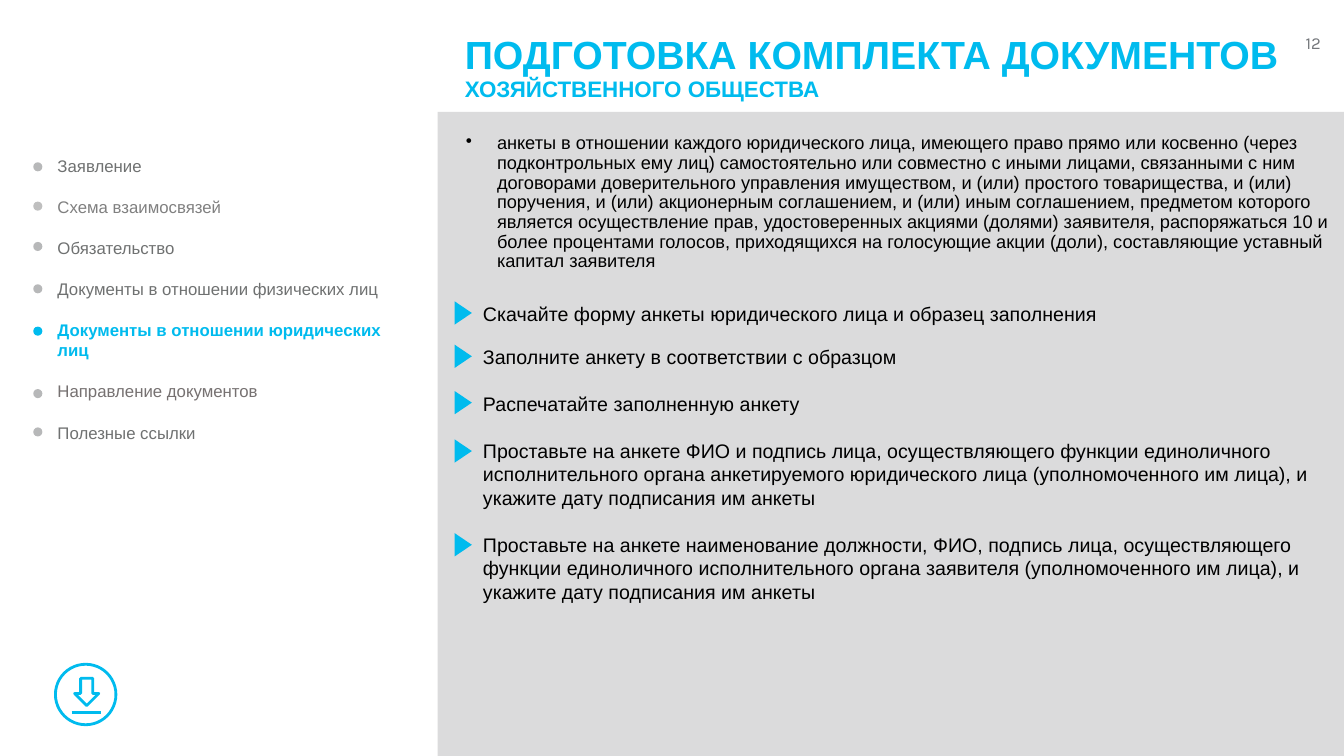
from dataclasses import dataclass

from lxml import etree
from pptx import Presentation
from pptx.dml.color import RGBColor
from pptx.enum.shapes import MSO_CONNECTOR, MSO_SHAPE
from pptx.enum.text import MSO_ANCHOR, MSO_AUTO_SIZE, PP_ALIGN
from pptx.oxml.ns import qn
from pptx.util import Emu, Pt

RECTANGLE = MSO_SHAPE.RECTANGLE
OVAL = MSO_SHAPE.OVAL
TRIANGLE = MSO_SHAPE.ISOSCELES_TRIANGLE
DOWN_ARROW = MSO_SHAPE.DOWN_ARROW
STRAIGHT = MSO_CONNECTOR.STRAIGHT
LEFT, RIGHT = PP_ALIGN.LEFT, PP_ALIGN.RIGHT
MIDDLE, TOP = MSO_ANCHOR.MIDDLE, MSO_ANCHOR.TOP
FIXED_SIZE = MSO_AUTO_SIZE.NONE

EMU_PER_PX = 9144
TWO_CONTENT_LAYOUT = 3
COLORS = {
    "accent": "00BBEE",
    "panel": "DBDBDC",
    "black": "000000",
    "number": "74777B",
    "menu": "6F7171",
    "menu_light": "808080",
    "menu_warm": "767171",
    "dot": "B7B8B9",
    "dot_light": "BFBFBF",
}


@dataclass(frozen=True)
class MenuItem:
    text: str
    dot_top: int
    color: str = "menu"
    dot_color: str = "dot"
    bold: bool = False


@dataclass(frozen=True)
class Step:
    text: str
    marker_top: int
    space_before: float


MENU = [
    MenuItem("Заявление", 161),
    MenuItem("Схема взаимосвязей", 200, "menu_light", "dot_light"),
    MenuItem("Обязательство", 240),
    MenuItem("Документы в отношении физических лиц", 282),
    MenuItem("Документы в отношении юридических лиц", 324, "accent", "accent", True),
    MenuItem("Направление документов", 386, "menu_warm"),
    MenuItem("Полезные ссылки", 424),
]

STEPS = [
    Step("Скачайте форму анкеты юридического лица и образец заполнения", 302, 0),
    Step("Заполните анкету в соответствии с образцом", 345, 14),
    Step("Распечатайте заполненную анкету", 391, 16.8),
    Step(
        "Проставьте на анкете ФИО и подпись лица, осуществляющего функции единоличного "
        "исполнительного органа анкетируемого юридического лица (уполномоченного им лица), "
        "и укажите дату подписания им анкеты", 439, 16.8),
    Step(
        "Проставьте на анкете наименование должности, ФИО, подпись лица, осуществляющего "
        "функции единоличного исполнительного органа заявителя (уполномоченного им лица), "
        "и укажите дату подписания им анкеты", 532, 16.8),
]

INTRO = (
    "анкеты в отношении каждого юридического лица, имеющего право прямо или косвенно "
    "(через подконтрольных ему лиц) самостоятельно или совместно с иными лицами, "
    "связанными с ним договорами доверительного управления имуществом, и (или) простого "
    "товарищества, и (или) поручения, и (или) акционерным соглашением, и (или) иным "
    "соглашением, предметом которого является осуществление прав, удостоверенных акциями "
    "(долями) заявителя, распоряжаться 10 и более процентами голосов, приходящихся на "
    "голосующие акции (доли), составляющие уставный капитал заявителя"
)


def px(value: int) -> Emu:
    return Emu(value * EMU_PER_PX)


def rgb(name: str) -> RGBColor:
    return RGBColor.from_string(COLORS[name])


def place(shape, left: int, top: int, width: int, height: int) -> None:
    shape.left, shape.top = px(left), px(top)
    shape.width, shape.height = px(width), px(height)


def prepare_frame(shape, anchor=TOP, inset: bool = True):
    frame = shape.text_frame
    frame.word_wrap = True
    frame.auto_size = FIXED_SIZE
    frame.vertical_anchor = anchor
    if not inset:
        frame.margin_left = frame.margin_top = frame.margin_right = frame.margin_bottom = 0
    return frame


def add_run(paragraph, text: str, *, size: float, color: str, bold: bool = False,
            font: str = "Arial") -> None:
    run = paragraph.add_run()
    run.text = text
    run.font.size = Pt(size)
    run.font.name = font
    run.font.bold = bold
    run.font.color.rgb = rgb(color)


def add_text(frame, text: str, *, align=LEFT, line_spacing: float = 1.0,
             before: float = 0, after: float = 0, bullet: str = "",
             margin: int = 0, indent: int = 0, **run_format):
    first = frame.paragraphs[0]
    paragraph = frame.add_paragraph() if first.runs else first
    paragraph.alignment = align
    paragraph.line_spacing = line_spacing
    paragraph.space_before = Pt(before)
    paragraph.space_after = Pt(after)
    properties = paragraph._p.get_or_add_pPr()
    properties.set("marL", str(px(margin)))
    properties.set("indent", str(px(indent)))
    if bullet:
        etree.SubElement(properties, qn("a:buChar")).set("char", bullet)
    else:
        etree.SubElement(properties, qn("a:buNone"))
    add_run(paragraph, text, **run_format)
    return paragraph


def add_figure(slide, kind, left: int, top: int, width: int, height: int, *,
               fill: str = "", line: str = "", rotation: int = 0) -> None:
    shape = slide.shapes.add_shape(kind, px(left), px(top), px(width), px(height))
    shape.shadow.inherit = False
    shape.rotation = rotation
    if fill:
        shape.fill.solid()
        shape.fill.fore_color.rgb = rgb(fill)
    else:
        shape.fill.background()
    if line:
        shape.line.color.rgb = rgb(line)
        shape.line.width = Pt(2)
    else:
        shape.line.fill.background()


def add_download_icon(slide) -> None:
    add_figure(slide, OVAL, 55, 659, 60, 60, line="accent")
    add_figure(slide, DOWN_ARROW, 74, 673, 24, 27, line="accent")
    base = slide.shapes.add_connector(STRAIGHT, px(71), px(707), px(100), px(707))
    base.line.color.rgb = rgb("accent")
    base.line.width = Pt(2)
    etree.SubElement(base._element.spPr, qn("a:effectLst"))


def main() -> None:
    presentation = Presentation()
    presentation.slide_width, presentation.slide_height = px(1333), px(750)
    slide = presentation.slides.add_slide(presentation.slide_layouts[TWO_CONTENT_LAYOUT])
    title, menu, steps = slide.placeholders

    add_figure(slide, RECTANGLE, 434, 111, 899, 639, fill="panel")
    panel = slide.shapes[-1]._element
    title._element.addprevious(panel)

    place(title, 451, 0, 882, 137)
    heading = add_text(prepare_frame(title, MIDDLE), "ПОДГОТОВКА КОМПЛЕКТА ДОКУМЕНТОВ",
                       line_spacing=0.9, size=28, color="accent", bold=True)
    heading.add_line_break()
    add_run(heading, "ХОЗЯЙСТВЕННОГО ОБЩЕСТВА", size=16, color="accent", bold=True)

    number = slide.shapes.add_textbox(px(1078), px(28), px(242), px(30))
    add_text(prepare_frame(number), "12", align=RIGHT, size=12, color="number", font="Karla")

    intro = slide.shapes.add_textbox(px(423), px(133), px(900), px(139))
    add_text(prepare_frame(intro, inset=False), INTRO, line_spacing=0.9, bullet="•",
             margin=70, indent=-31, size=13, color="black")

    place(menu, 47, 149, 369, 298)
    menu_frame = prepare_frame(menu)
    for item in MENU:
        add_text(menu_frame, item.text, after=15, size=12, color=item.color, bold=item.bold)
        add_figure(slide, OVAL, 33, item.dot_top, 9, 9, fill=item.dot_color)

    place(steps, 469, 294, 864, 312)
    steps_frame = prepare_frame(steps)
    for step in STEPS:
        add_text(steps_frame, step.text, before=step.space_before, size=14, color="black")
        add_figure(slide, TRIANGLE, 448, step.marker_top, 23, 17, fill="accent", rotation=90)

    add_download_icon(slide)
    presentation.save("out.pptx")


if __name__ == "__main__":
    main()
